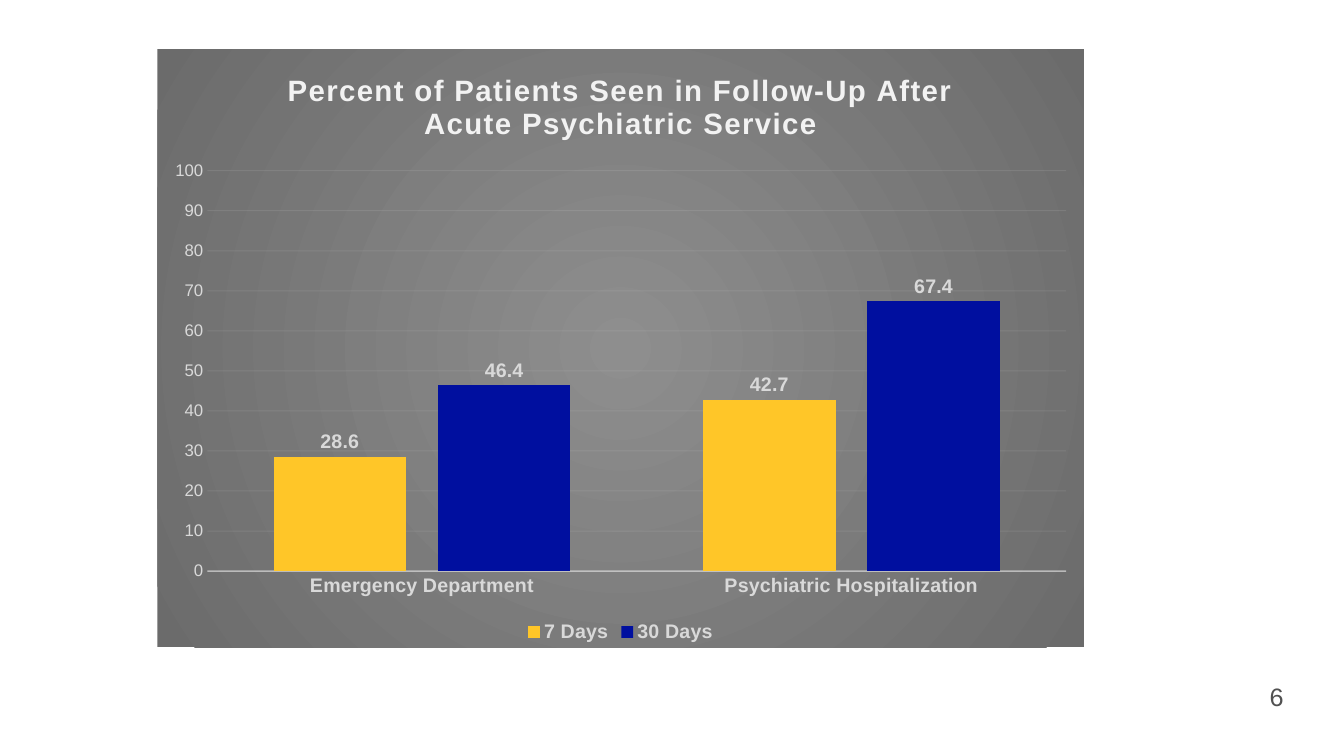
from lxml import etree
from pptx import Presentation
from pptx import util as u
from pptx.chart import data
from pptx.dml import color
from pptx.enum import chart as charts, text
from pptx.oxml import ns, parse_xml

THEME = {
    "font": "Arial",
    "body": "515151", "heading": "F2F2F2", "label": "D9D9D9", "rule": "F2F2F2",
    "center": "8E8E8E", "edge": "6B6B6B",
    "series": ["FFC628", "000F9F"],
    "title_size": 21, "label_size": 14, "tick_size": 12, "base_size": 10, "number_size": 18,
}


def format_text(font, size, tint, bold=False):
    font.name = THEME["font"]
    font.size = u.Pt(size)
    font.bold = bold
    font.color.rgb = color.RGBColor.from_string(tint)


def format_line(line, width, opacity):
    line.width = u.Pt(width)
    line.color.rgb = color.RGBColor.from_string(THEME["rule"])
    tint = line.fill._xPr.find(".//" + ns.qn("a:srgbClr"))
    etree.SubElement(tint, ns.qn("a:alpha")).set("val", str(opacity * 1000))


presentation = Presentation()
presentation.slide_width = u.Inches(13.33)
presentation.slide_height = u.Inches(7.5)
slide = presentation.slides.add_slide(presentation.slide_layouts[6])

number_box = slide.shapes.add_textbox(u.Inches(9.83), u.Inches(6.71), u.Inches(3), u.Inches(0.4))
frame = number_box.text_frame
frame.word_wrap = True
frame.vertical_anchor = text.MSO_ANCHOR.MIDDLE
paragraph = frame.paragraphs[0]
paragraph.text = "6"
paragraph.alignment = text.PP_ALIGN.RIGHT
format_text(paragraph.runs[0].font, THEME["number_size"], THEME["body"])

follow_up = data.CategoryChartData()
follow_up.categories = ["Emergency Department", "Psychiatric Hospitalization"]
follow_up.add_series("7 Days", [28.6, 42.7])
follow_up.add_series("30 Days", [46.4, 67.4])
chart = slide.shapes.add_chart(
    charts.XL_CHART_TYPE.COLUMN_CLUSTERED,
    u.Inches(1.56), u.Inches(0.49), u.Inches(9.19), u.Inches(5.93), follow_up,
).chart
format_text(chart.font, THEME["base_size"], THEME["body"])

chart.has_title = True
title = chart.chart_title.text_frame.paragraphs[0]
title.text = "Percent of Patients Seen in Follow-Up After Acute Psychiatric Service"
title_font = title.runs[0].font
format_text(title_font, THEME["title_size"], THEME["heading"], True)
title.runs[0]._r.get_or_add_rPr().set("spc", "100")

chart.has_legend = True
chart.legend.position = charts.XL_LEGEND_POSITION.BOTTOM
chart.legend.include_in_layout = False
format_text(chart.legend.font, THEME["label_size"], THEME["label"], True)

category_axis = chart.category_axis
category_axis.major_tick_mark = charts.XL_TICK_MARK.NONE
format_text(category_axis.tick_labels.font, THEME["label_size"], THEME["label"], True)
format_line(category_axis.format.line, 1, 54)

value_axis = chart.value_axis
value_axis.minimum_scale = 0
value_axis.maximum_scale = 100
value_axis.major_unit = 10
value_axis.major_tick_mark = charts.XL_TICK_MARK.NONE
value_axis.format.line.fill.background()
format_text(value_axis.tick_labels.font, THEME["tick_size"], THEME["label"])
format_line(value_axis.major_gridlines.format.line, 0.75, 10)

plot = chart.plots[0]
plot.gap_width = 100
plot.overlap = -24
plot.vary_by_categories = False
for series, tint in zip(plot.series, THEME["series"]):
    series.format.fill.solid()
    series.format.fill.fore_color.rgb = color.RGBColor.from_string(tint)
    labels = series.data_labels
    labels.show_value = True
    labels.position = charts.XL_LABEL_POSITION.OUTSIDE_END
    format_text(labels.font, THEME["label_size"], THEME["label"], True)

plot_area = chart.element.find(".//" + ns.qn("c:plotArea"))
for old_layout in plot_area.findall(ns.qn("c:layout")):
    plot_area.remove(old_layout)
plot_area.insert(0, parse_xml(
    f'<c:layout {ns.nsdecls("c")}><c:manualLayout><c:layoutTarget val="inner"/>'
    '<c:xMode val="edge"/><c:yMode val="edge"/><c:x val="0.054"/><c:y val="0.203"/>'
    '<c:w val="0.927"/><c:h val="0.67"/></c:manualLayout></c:layout>'
))
chart.element.find(ns.qn("c:chart")).addnext(parse_xml(
    f'<c:spPr {ns.nsdecls("c", "a")}><a:gradFill><a:gsLst>'
    f'<a:gs pos="0"><a:srgbClr val="{THEME["center"]}"/></a:gs>'
    f'<a:gs pos="100000"><a:srgbClr val="{THEME["edge"]}"/></a:gs></a:gsLst>'
    '<a:path path="circle"><a:fillToRect l="50000" t="50000" r="50000" b="50000"/></a:path>'
    '</a:gradFill><a:ln><a:noFill/></a:ln></c:spPr>'
))

presentation.save("out.pptx")
